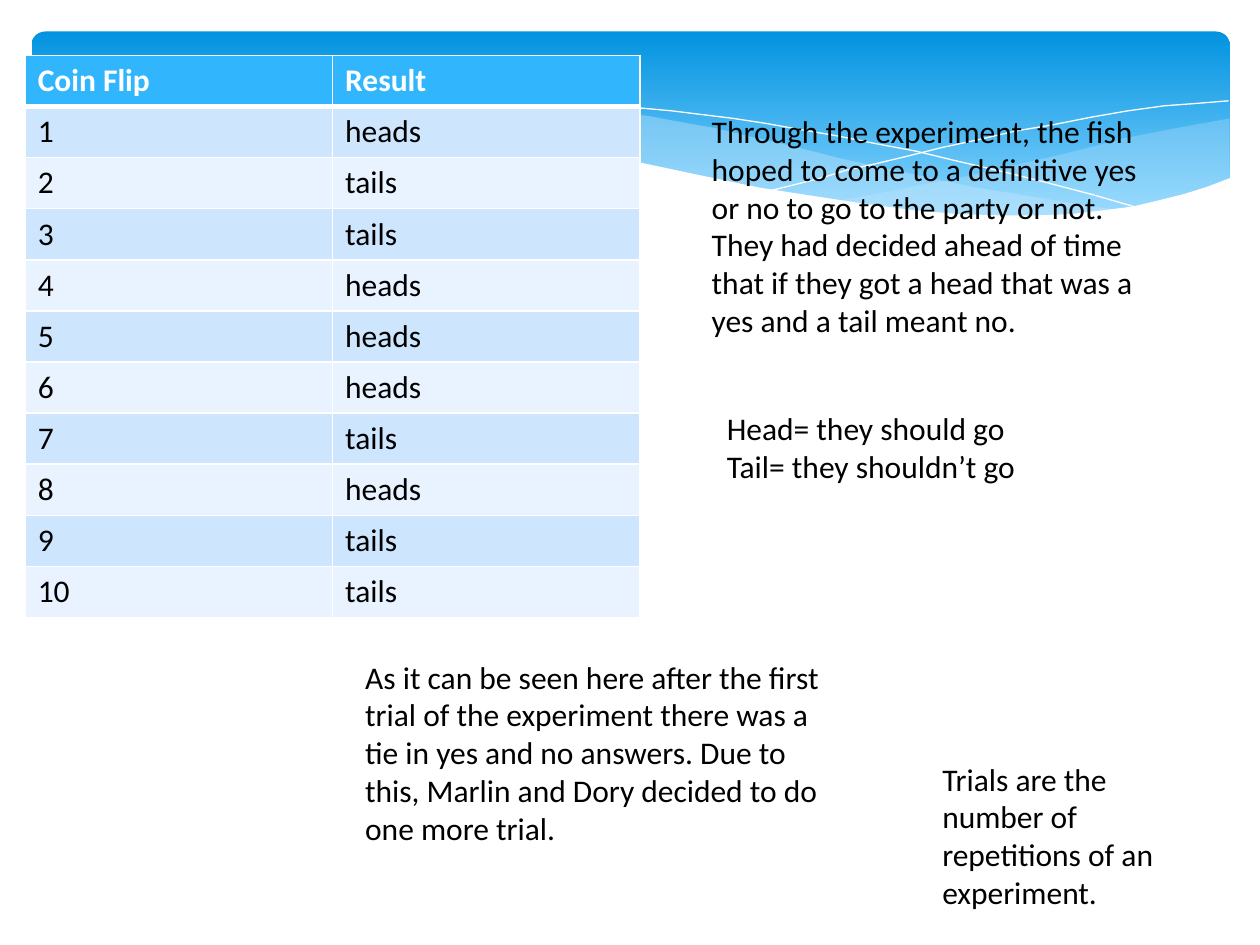
from lxml.etree import SubElement
from pptx import Presentation
from pptx.dml.color import RGBColor as Rgb
from pptx.enum.shapes import MSO_SHAPE as Shape
from pptx.enum.text import MSO_AUTO_SIZE as AutoSize
from pptx.oxml.ns import qn
from pptx.util import Inches, Pt

THEME = {
    "font": "Calibri", "size": 18, "text": "000000", "white": "FFFFFF",
    "banner_top": "0293E0", "banner_bottom": "83D3FE", "wave": "C6E7FC",
    "header": "31B6FD", "bands": ("CEE5FE", "E8F3FF"),
    "border": 1, "header_border": 3,
}

HEADINGS = ("Coin Flip", "Result")
FLIPS = ("heads", "tails", "tails", "heads", "heads",
         "heads", "tails", "heads", "tails", "tails")
NOTES = [
    ((5.55, 0.84, 3.78, 1.92),
     ["Through the experiment, the fish hoped to come to a definitive yes or no "
      "to go to the party or not. They had decided ahead of time that if they "
      "got a head that was a yes and a tail meant no."]),
    ((5.67, 3.2, 3.54, 0.71),
     ["Head= they should go", "Tail= they shouldn’t go"]),
    ((2.8, 5.17, 3.94, 1.62),
     ["As it can be seen here after the first trial of the experiment there was "
      "a tie in yes and no answers. Due to this, Marlin and Dory decided to do "
      "one more trial."]),
    ((7.38, 5.98, 2.28, 1.31),
     ["Trials are the number of repetitions of an experiment."]),
]

RIGHT_WAVE = [
    (9.76, 0.94), (9.48, 0.99), (9.21, 1.04), (8.91, 1.1), (8.61, 1.18),
    (8.32, 1.25), (8.05, 1.31), (7.79, 1.37), (7.53, 1.43), (7.29, 1.47),
    (7.06, 1.52), (6.83, 1.56), (6.61, 1.6), (6.91, 1.64), (7.19, 1.67),
    (7.45, 1.69), (7.69, 1.71), (7.92, 1.72), (8.14, 1.72), (8.35, 1.72),
    (8.54, 1.7), (8.72, 1.69), (8.89, 1.66), (9.05, 1.63), (9.21, 1.6),
    (9.35, 1.56), (9.49, 1.52), (9.63, 1.47), (9.76, 1.41),
]
LONG_WAVE = [
    (8.93, 1.67), (8.66, 1.64), (8.37, 1.59), (8.07, 1.54), (7.75, 1.49),
    (7.41, 1.42), (7.06, 1.34), (6.68, 1.26), (6.29, 1.16), (5.98, 1.09),
    (5.69, 1.02), (5.41, 0.97), (5.14, 0.92), (4.89, 0.89), (4.65, 0.86),
    (4.42, 0.83), (4.2, 0.82), (3.99, 0.8), (3.61, 0.8), (3.28, 0.81),
    (2.99, 0.84), (2.86, 0.86), (3.23, 0.9), (3.62, 0.97), (4.04, 1.06),
    (4.49, 1.16), (4.91, 1.26), (5.3, 1.35), (5.66, 1.43), (6.01, 1.5),
    (6.34, 1.56), (6.65, 1.61), (6.95, 1.65), (7.22, 1.68), (7.48, 1.7),
    (7.73, 1.72), (7.96, 1.73), (8.28, 1.73), (8.48, 1.72), (8.67, 1.7),
    (8.84, 1.68),
]
FALLING_LINE = [
    (3.09, 0.9), (3.18, 0.88), (3.35, 0.85), (3.53, 0.84), (3.74, 0.82),
    (4.16, 0.81), (4.5, 0.82), (4.89, 0.84), (5.33, 0.88), (5.82, 0.94),
    (6.08, 0.98), (6.36, 1.03), (6.65, 1.08), (6.95, 1.14), (7.27, 1.2),
    (7.6, 1.28), (7.95, 1.36), (8.31, 1.45), (8.69, 1.55), (9.07, 1.66),
]
RISING_LINE = [
    (6.13, 1.51), (6.53, 1.41), (6.72, 1.35), (6.95, 1.3), (7.2, 1.24),
    (7.48, 1.17), (7.76, 1.11), (8.06, 1.04), (8.36, 0.99), (8.66, 0.93),
    (8.95, 0.88), (9.24, 0.84), (9.51, 0.82), (9.75, 0.8),
]
PAPER_EDGE = [
    (9.77, 1.41), (9.59, 1.48), (9.4, 1.54), (9.2, 1.59), (8.99, 1.64),
    (8.75, 1.67), (8.5, 1.7), (8.23, 1.71), (7.93, 1.71), (7.61, 1.7),
    (7.26, 1.67), (6.88, 1.62), (6.48, 1.56), (6.03, 1.49), (5.55, 1.39),
    (5.03, 1.28), (4.47, 1.14), (4.18, 1.07), (3.91, 1.02), (3.65, 0.96),
    (3.4, 0.92), (3.16, 0.88), (2.92, 0.85), (2.71, 0.82), (2.5, 0.81),
    (2.11, 0.78), (1.77, 0.78), (1.46, 0.79), (1.19, 0.82), (0.95, 0.85),
    (0.76, 0.89), (0.59, 0.93), (0.46, 0.98), (0.36, 1.02), (0.23, 1.07),
    (0.23, 2.24), (9.77, 2.24),
]
WAVES = [
    (RIGHT_WAVE, "wave", 29), (LONG_WAVE, "wave", 40),
    (FALLING_LINE, None, 100), (RISING_LINE, None, 100),
    (PAPER_EDGE, "white", 100),
]


def color(name):
    return Rgb.from_string(THEME.get(name, name))


def style_text(frame, ink="text", bold=False):
    for para in frame.paragraphs:
        for span in para.runs:
            span.font.name = THEME["font"]
            span.font.size = Pt(THEME["size"])
            span.font.bold = bold
            span.font.color.rgb = color(ink)


def add_banner(page):
    banner = page.shapes.add_shape(
        Shape.ROUNDED_RECTANGLE, *map(Inches, (0.25, 0.25, 9.51, 1.56)))
    banner.adjustments[0] = 0.07
    banner.shadow.inherit = False
    banner.line.fill.background()
    banner.fill.gradient()
    banner.fill.gradient_angle = 270
    stops = zip(banner.fill.gradient_stops, (0, 0.9), ("banner_top", "banner_bottom"))
    for stop, position, name in stops:
        stop.position = position
        stop.color.rgb = color(name)


def add_wave(group, points, fill, opacity):
    start, *rest = [tuple(map(Inches, point)) for point in points]
    builder = group.shapes.build_freeform(*start)
    builder.add_line_segments(rest, close=fill is not None)
    wave = builder.convert_to_shape()
    wave.shadow.inherit = False
    if fill is None:
        wave.fill.background()
        wave.line.color.rgb = color("white")
        wave.line.width = Pt(0)
        return
    wave.line.fill.background()
    wave.fill.solid()
    wave.fill.fore_color.rgb = color(fill)
    if opacity < 100:
        tint = wave.element.spPr.find(f"{qn('a:solidFill')}/{qn('a:srgbClr')}")
        SubElement(tint, qn("a:alpha"), val=str(opacity * 1000))


def add_borders(cell, row):
    properties = cell._tc.get_or_add_tcPr()
    heavy_side = {0: "lnB", 1: "lnT"}.get(row)
    for side in ("lnL", "lnR", "lnT", "lnB"):
        width = THEME["header_border" if side == heavy_side else "border"]
        line = SubElement(properties, qn(f"a:{side}"), w=str(Pt(width)))
        fill = SubElement(line, qn("a:solidFill"))
        SubElement(fill, qn("a:srgbClr"), val=THEME["white"])


def add_results(page):
    rows = [HEADINGS] + [(str(n), flip) for n, flip in enumerate(FLIPS, 1)]
    table = page.shapes.add_table(
        len(rows), len(HEADINGS), *map(Inches, (0.2, 0.44, 4.88, 4.4))).table
    for r, row in enumerate(rows):
        header = r == 0
        for c, text in enumerate(row):
            cell = table.cell(r, c)
            cell.text_frame.text = text
            style_text(cell.text_frame, "white" if header else "text", header)
            add_borders(cell, r)
            cell.fill.solid()
            cell.fill.fore_color.rgb = color(
                "header" if header else THEME["bands"][(r - 1) % 2])


def add_note(page, place, lines):
    box = page.shapes.add_textbox(*map(Inches, place))
    frame = box.text_frame
    frame.word_wrap = True
    frame.auto_size = AutoSize.SHAPE_TO_FIT_TEXT
    frame.text = "\n".join(lines)
    style_text(frame)


def main():
    """Build the coin flip results slide."""
    deck = Presentation()
    deck.slide_width, deck.slide_height = Inches(10), Inches(7.5)
    page = deck.slides.add_slide(deck.slide_layouts[6])
    add_banner(page)
    group = page.shapes.add_group_shape()
    for points, fill, opacity in WAVES:
        add_wave(group, points, fill, opacity)
    add_results(page)
    for place, lines in NOTES:
        add_note(page, place, lines)
    deck.save("out.pptx")


if __name__ == "__main__":
    main()
